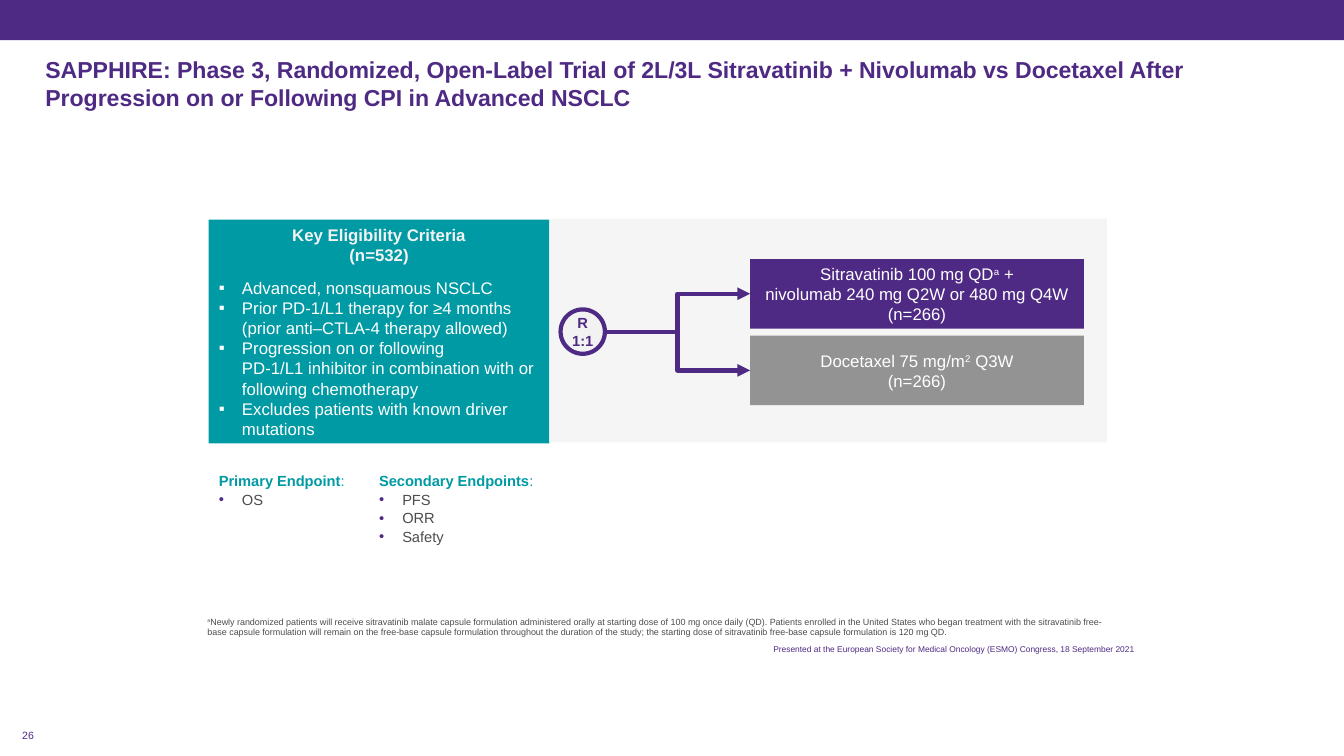
from lxml.etree import SubElement
from pptx import Presentation
from pptx.dml.color import RGBColor
from pptx.enum.shapes import MSO_CONNECTOR, MSO_SHAPE
from pptx.enum.text import MSO_ANCHOR, MSO_AUTO_SIZE, PP_ALIGN
from pptx.oxml.ns import qn
from pptx.util import Inches, Pt

THEME = {
    "font": "Arial",
    "purple": RGBColor.from_string("4F2A84"),
    "teal": RGBColor.from_string("009AA4"),
    "grey": RGBColor.from_string("939393"),
    "panel": RGBColor.from_string("F5F5F5"),
    "circle": RGBColor.from_string("F2F2F2"),
    "heading": RGBColor.from_string("F3F3F3"),
    "white": RGBColor.from_string("FFFFFF"),
    "text": RGBColor.from_string("4D4D4D"),
    "title_size": Pt(16.5),
    "body_size": Pt(12),
    "endpoint_size": Pt(10.5),
    "number_size": Pt(7.5),
    "note_size": Pt(6.4),
    "source_size": Pt(6),
}


def write(paragraph, parts, size, color, bold=False, bullet=None, **spacing):
    """Fill a paragraph; a part is a text or (text, font values), "\n" breaks a line."""
    props = paragraph._p.get_or_add_pPr()
    indent = Inches(0.23) if bullet else 0
    props.set("marL", str(indent))
    props.set("indent", str(-indent))
    if bullet:
        mark, mark_color = bullet
        SubElement(SubElement(props, qn("a:buClr")), qn("a:srgbClr"), val=str(THEME[mark_color]))
        SubElement(props, qn("a:buFont"), typeface=THEME["font"])
        SubElement(props, qn("a:buChar"), char=mark)
    else:
        SubElement(props, qn("a:buNone"))
    for name, value in {"alignment": PP_ALIGN.LEFT, "space_before": Pt(0), **spacing}.items():
        setattr(paragraph, name, value)
    for part in parts:
        text, changes = (part, {}) if isinstance(part, str) else part
        for number, line in enumerate(text.split("\n")):
            if number:
                paragraph.add_line_break()
            run = paragraph.add_run()
            run.text = line
            values = {"name": THEME["font"], "size": THEME[size], "bold": bold, **changes}
            raised = values.pop("raised", False)
            for name, value in values.items():
                setattr(run.font, name, value)
            run.font.color.rgb = THEME[color]
            if raised:
                run._r.get_or_add_rPr().set("baseline", "30000")


def frame_of(shape, box=None, **values):
    """Place a shape and prepare its text frame."""
    if box:
        for name, value in zip(("left", "top", "width", "height"), box):
            setattr(shape, name, Inches(value))
    frame = shape.text_frame
    defaults = {"word_wrap": True, "auto_size": MSO_AUTO_SIZE.NONE,
                "vertical_anchor": MSO_ANCHOR.MIDDLE}
    for name, value in {**defaults, **values}.items():
        setattr(frame, name, value)
    return frame


presentation = Presentation()
presentation.slide_width, presentation.slide_height = Inches(13.33), Inches(7.5)
slide = presentation.slides.add_slide(presentation.slide_layouts[4])
holders = {holder.placeholder_format.idx: holder for holder in slide.placeholders}
spare = holders[4]._element
spare.getparent().remove(spare)

# Title
title = frame_of(holders[0], (0.35, 0.2, 12.62, 1.25))
write(title.paragraphs[0],
      ["SAPPHIRE: Phase 3, Randomized, Open-Label Trial of 2L/3L Sitravatinib + Nivolumab "
       "vs Docetaxel After Progression on or Following CPI in Advanced NSCLC"],
      "title_size", "purple", bold=True)

# Header band, study panel, treatment arms and randomization circle
arm_left, arm_width, arm_height = 7.44, 3.31, 0.69
arm_tops = (2.57, 3.33)
circle_left, circle_top, circle_size = 5.56, 3.07, 0.44
raised = {"raised": True}
blocks = [
    (MSO_SHAPE.RECTANGLE, (0, 0, 13.33, 0.4), "purple", [], {}),
    (MSO_SHAPE.RECTANGLE, (5.45, 2.17, 5.53, 2.22), "panel", [], {}),
    (MSO_SHAPE.RECTANGLE, (arm_left, arm_tops[0], arm_width, arm_height), "purple",
     ["Sitravatinib 100 mg QD", ("a", raised),
      " +\nnivolumab 240 mg Q2W or 480 mg Q4W (n=266)"],
     {"size": "body_size", "color": "white"}),
    (MSO_SHAPE.RECTANGLE, (arm_left, arm_tops[1], arm_width, arm_height), "grey",
     ["Docetaxel 75 mg/m", ("2", raised), " Q3W\n(n=266)"],
     {"size": "body_size", "color": "white"}),
    (MSO_SHAPE.OVAL, (circle_left, circle_top, circle_size, circle_size), "circle",
     ["R\n1:1"], {"size": "endpoint_size", "color": "purple", "bold": True}),
]
for outline, box, fill, parts, style in blocks:
    block = slide.shapes.add_shape(outline, *map(Inches, box))
    block.shadow.inherit = False
    block.fill.solid()
    block.fill.fore_color.rgb = THEME[fill]
    if outline == MSO_SHAPE.OVAL:
        block.line.color.rgb = THEME["purple"]
        block.line.width = Pt(3)
        margins = dict.fromkeys(("margin_left", "margin_top", "margin_right", "margin_bottom"), 0)
    else:
        block.line.fill.background()
        margins = {}
    if parts:
        write(frame_of(block, **margins).paragraphs[0], parts,
              alignment=PP_ALIGN.CENTER, **style)

# Arrows from randomization to each arm
for arm_top in arm_tops:
    arrow = slide.shapes.add_connector(
        MSO_CONNECTOR.ELBOW,
        Inches(circle_left + circle_size), Inches(circle_top + circle_size / 2),
        Inches(arm_left), Inches(arm_top + arm_height / 2))
    arrow.line.color.rgb = THEME["purple"]
    arrow.line.width = Pt(3)
    SubElement(arrow.line._get_or_add_ln(), qn("a:tailEnd"), type="triangle")
    SubElement(arrow._element.spPr, qn("a:effectLst"))

# Eligibility criteria
holders[1].fill.solid()
holders[1].fill.fore_color.rgb = THEME["teal"]
criteria = frame_of(holders[1], (2.07, 2.18, 3.38, 2.22))
write(criteria.paragraphs[0], ["Key Eligibility Criteria\n(n=532)"], "body_size", "heading",
      bold=True, alignment=PP_ALIGN.CENTER, space_after=Pt(9))
for criterion in (
    "Advanced, nonsquamous NSCLC",
    "Prior PD-1/L1 therapy for ≥4 months (prior anti–CTLA-4 therapy allowed)",
    "Progression on or following \nPD-1/L1 inhibitor in combination with or "
    "following chemotherapy",
    "Excludes patients with known driver mutations",
):
    write(criteria.add_paragraph(), [criterion], "body_size", "white", bullet=("▪", "white"))

# Endpoints
for holder, left, width, heading, endpoints in (
    (holders[2], 2.07, 1.59, "Primary Endpoint", ["OS"]),
    (holders[3], 3.66, 1.79, "Secondary Endpoints", ["PFS", "ORR", "Safety"]),
):
    column = frame_of(holder, (left, 4.63, width, 1.06), vertical_anchor=MSO_ANCHOR.TOP)
    write(column.paragraphs[0], [(heading, {"bold": True}), ":"], "endpoint_size", "teal")
    for endpoint in endpoints:
        write(column.add_paragraph(), [endpoint], "endpoint_size", "text",
              bullet=("•", "purple"), space_before=Pt(0.8))

# Footnote, source line and slide number
small_margins = {"margin_left": Inches(0.07), "margin_right": Inches(0.07),
                 "margin_top": Inches(0.04), "margin_bottom": Inches(0.04)}
for box, parts, size, color, layout, spacing in (
    ((1.96, 6.09, 9.14, 0.28),
     [("a", raised),
      "Newly randomized patients will receive sitravatinib malate capsule formulation "
      "administered orally at starting dose of 100 mg once daily (QD). Patients enrolled in "
      "the United States who began treatment with the sitravatinib free-base capsule "
      "formulation will remain on the free-base capsule formulation throughout the duration "
      "of the study; the starting dose of sitravatinib free-base capsule formulation is "
      "120 mg QD."],
     "note_size", "text", {"vertical_anchor": MSO_ANCHOR.BOTTOM}, {"line_spacing": Pt(7.1)}),
    ((7.1, 6.34, 4.22, 0.2),
     ["Presented at the European Society for Medical Oncology (ESMO) Congress, "
      "18 September 2021"],
     "source_size", "purple", small_margins, {"alignment": PP_ALIGN.RIGHT}),
    ((0.15, 7.13, 2.11, 0.32), ["26"], "number_size", "purple", small_margins, {}),
):
    note = slide.shapes.add_textbox(*map(Inches, box))
    write(frame_of(note, **layout).paragraphs[0], parts, size, color, **spacing)

presentation.save("out.pptx")
